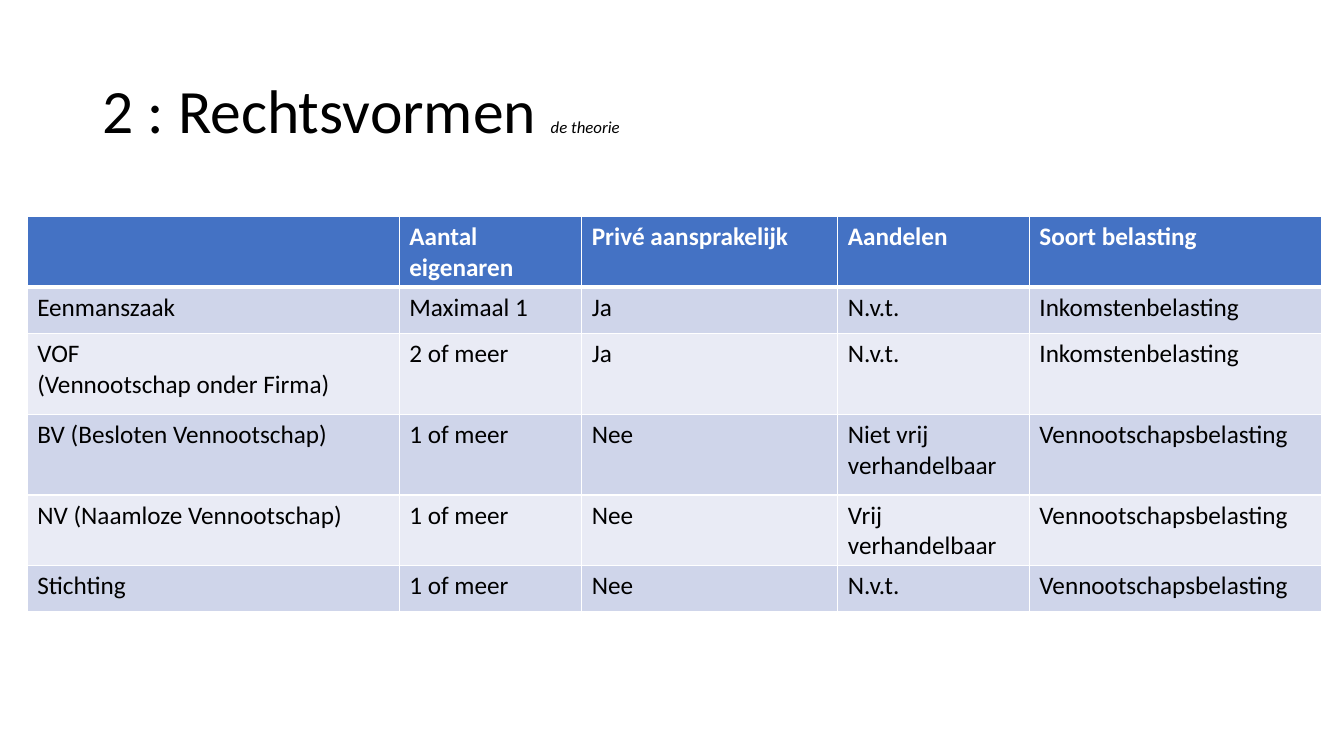
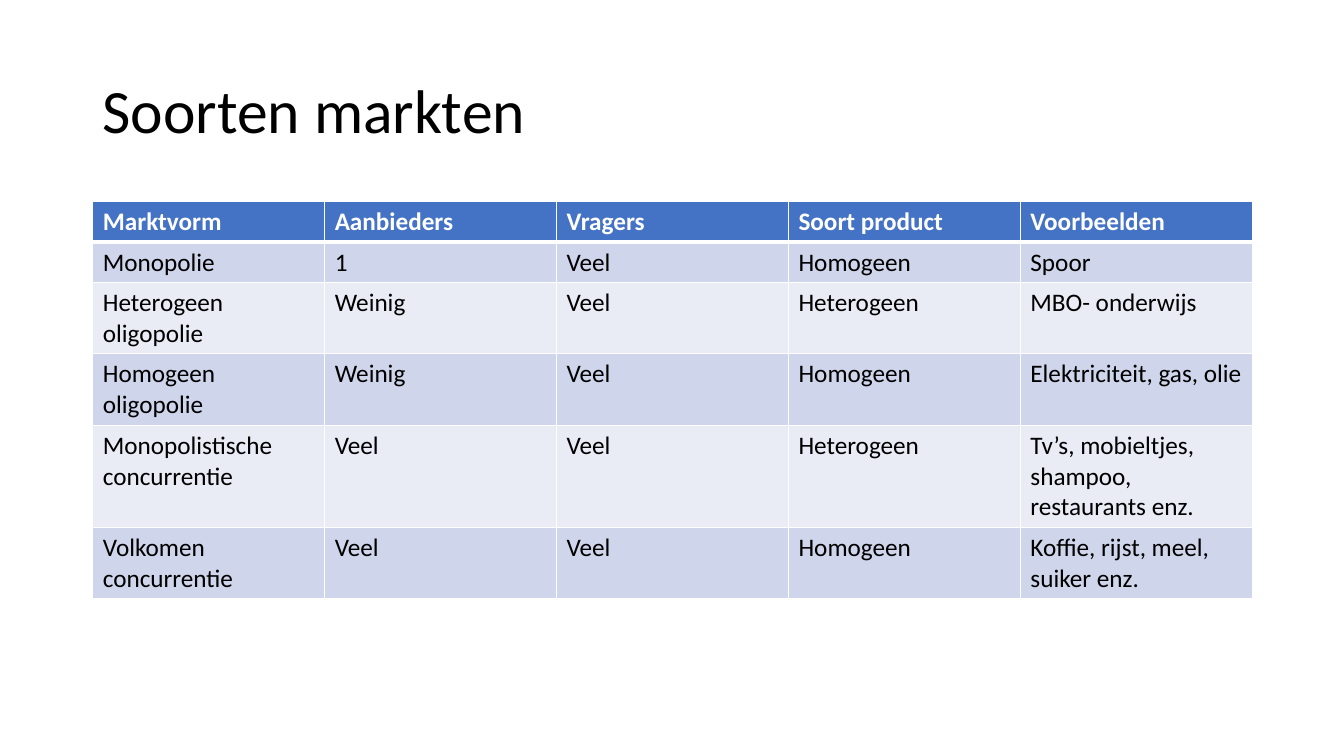
import pptx
import pptx.util
import pptx.dml.color
import pptx.enum.text
import pptx.oxml.ns
from lxml import etree

Inches, Pt = pptx.util.Inches, pptx.util.Pt
RGBColor = pptx.dml.color.RGBColor

BLACK = RGBColor(0x00, 0x00, 0x00)
WHITE = RGBColor(0xFF, 0xFF, 0xFF)
HEADER_BLUE = RGBColor(0x44, 0x72, 0xC4)
BANDS = (RGBColor(0xCF, 0xD5, 0xEA), RGBColor(0xE9, 0xEB, 0xF5))

FONT = "Calibri"
SLIDE_WIDTH, SLIDE_HEIGHT = 13.33, 7.5
TITLE_BOX = (0.92, 0.4, 11.5, 1.45)
TITLE_SIZE, SUBTITLE_SIZE, TABLE_SIZE = 44, 12, 18
THIN_RULE, HEADER_RULE = 1, 3

SLIDES = [
    {
        "title": "2 : Rechtsvormen ",
        "subtitle": "de theorie",
        "corner": (0.27, 2.15),
        "columns": [3.69, 1.81, 2.54, 1.9, 2.9],
        "heights": [0.7, 0.46, 0.8, 0.8, 0.7, 0.46],
        "rows": [
            ("", "Aantal eigenaren", "Privé aansprakelijk", "Aandelen", "Soort belasting"),
            ("Eenmanszaak", "Maximaal 1", "Ja", "N.v.t.", "Inkomstenbelasting"),
            ("VOF\v(Vennootschap onder Firma)", "2 of meer", "Ja", "N.v.t.", "Inkomstenbelasting"),
            ("BV (Besloten Vennootschap)", "1 of meer", "Nee", "Niet vrij verhandelbaar",
             "Vennootschapsbelasting"),
            ("NV (Naamloze Vennootschap)", "1 of meer", "Nee", "Vrij verhandelbaar",
             "Vennootschapsbelasting"),
            ("Stichting", "1 of meer", "Nee", "N.v.t.", "Vennootschapsbelasting"),
        ],
    },
    {
        "title": "Soorten markten",
        "subtitle": "",
        "corner": (0.92, 2),
        "columns": [2.3] * 5,
        "heights": [0.4, 0.4, 0.71, 0.71, 1.01, 0.71],
        "rows": [
            ("Marktvorm", "Aanbieders", "Vragers", "Soort product", "Voorbeelden"),
            ("Monopolie", "1", "Veel", "Homogeen", "Spoor"),
            ("Heterogeen oligopolie", "Weinig", "Veel", "Heterogeen", "MBO- onderwijs"),
            ("Homogeen oligopolie", "Weinig", "Veel", "Homogeen", "Elektriciteit, gas, olie"),
            ("Monopolistische concurrentie", "Veel", "Veel", "Heterogeen",
             "Tv’s, mobieltjes, shampoo, restaurants enz."),
            ("Volkomen concurrentie", "Veel", "Veel", "Homogeen",
             "Koffie, rijst, meel, suiker enz."),
        ],
    },
]


def set_font(font, size, color, bold=False):
    font.name, font.size, font.bold = FONT, Pt(size), bold
    font.color.rgb = color


def add_title(slide, title, subtitle):
    frame = slide.shapes.add_textbox(*map(Inches, TITLE_BOX)).text_frame
    frame.word_wrap = True
    frame.vertical_anchor = pptx.enum.text.MSO_ANCHOR.MIDDLE
    heading = frame.paragraphs[0]
    heading.line_spacing = 0.9
    set_font(heading.font, TITLE_SIZE, BLACK)
    heading.add_run().text = title
    if subtitle:
        remark = heading.add_run()
        remark.text = subtitle
        remark.font.size, remark.font.italic = Pt(SUBTITLE_SIZE), True


def add_rules(cell, top, bottom):
    properties = cell._tc.get_or_add_tcPr()
    qn = pptx.oxml.ns.qn
    for side, width in (("lnL", THIN_RULE), ("lnR", THIN_RULE), ("lnT", top), ("lnB", bottom)):
        rule = etree.SubElement(properties, qn("a:" + side), w=str(Pt(width)))
        paint = etree.SubElement(rule, qn("a:solidFill"))
        etree.SubElement(paint, qn("a:srgbClr"), val=str(WHITE))


def add_overview(slide, corner, columns, heights, rows):
    area = map(Inches, (*corner, sum(columns), sum(heights)))
    overview = slide.shapes.add_table(len(rows), len(columns), *area).table
    for column, width in zip(overview.columns, columns):
        column.width = Inches(width)
    for index, (row, height, texts) in enumerate(zip(overview.rows, heights, rows)):
        row.height = Inches(height)
        is_header = index == 0
        top = HEADER_RULE if index == 1 else THIN_RULE
        bottom = HEADER_RULE if is_header else THIN_RULE
        for cell, text in zip(row.cells, texts):
            add_rules(cell, top, bottom)
            cell.fill.solid()
            cell.fill.fore_color.rgb = HEADER_BLUE if is_header else BANDS[(index - 1) % 2]
            cell.text = text
            set_font(cell.text_frame.paragraphs[0].font, TABLE_SIZE,
                     WHITE if is_header else BLACK, is_header)


def main():
    deck = pptx.Presentation()
    deck.slide_width, deck.slide_height = Inches(SLIDE_WIDTH), Inches(SLIDE_HEIGHT)
    for content in SLIDES:
        slide = deck.slides.add_slide(deck.slide_layouts[6])
        add_title(slide, content["title"], content["subtitle"])
        add_overview(slide, content["corner"], content["columns"],
                     content["heights"], content["rows"])
    deck.save("out.pptx")


if __name__ == "__main__":
    main()
